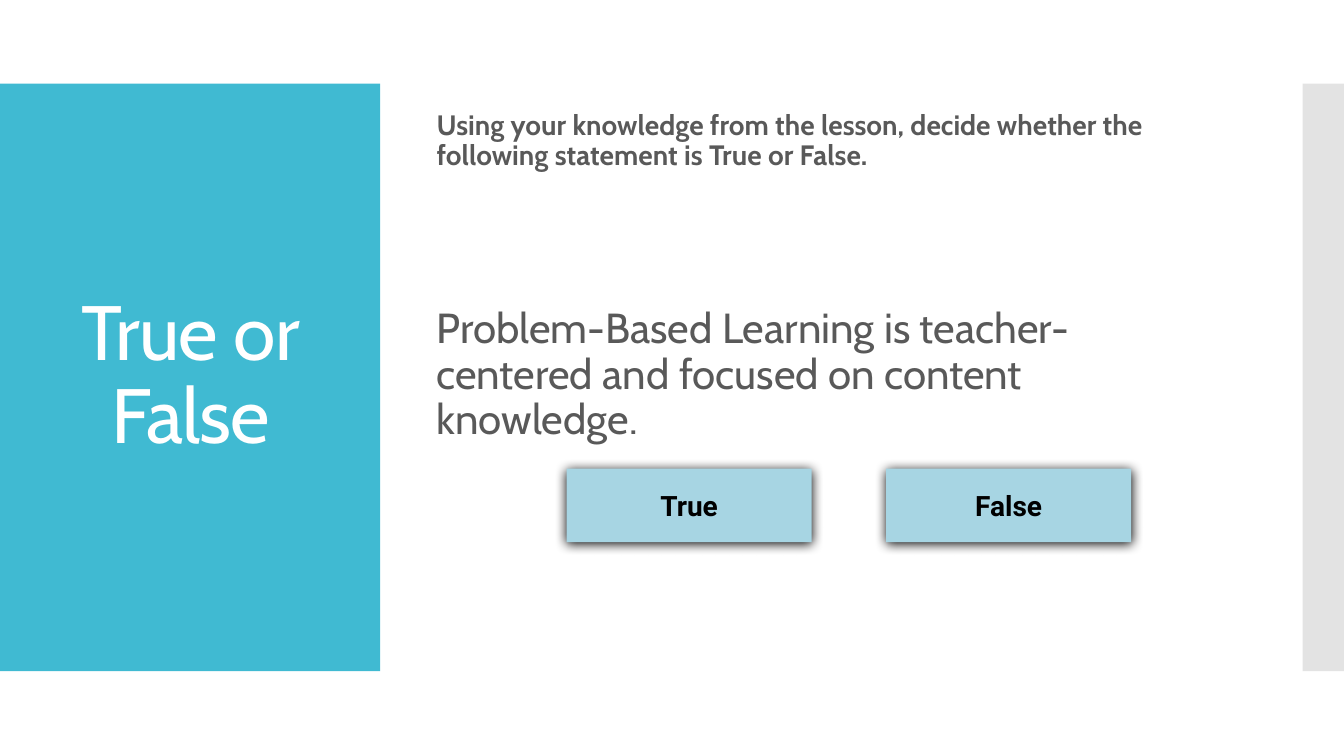
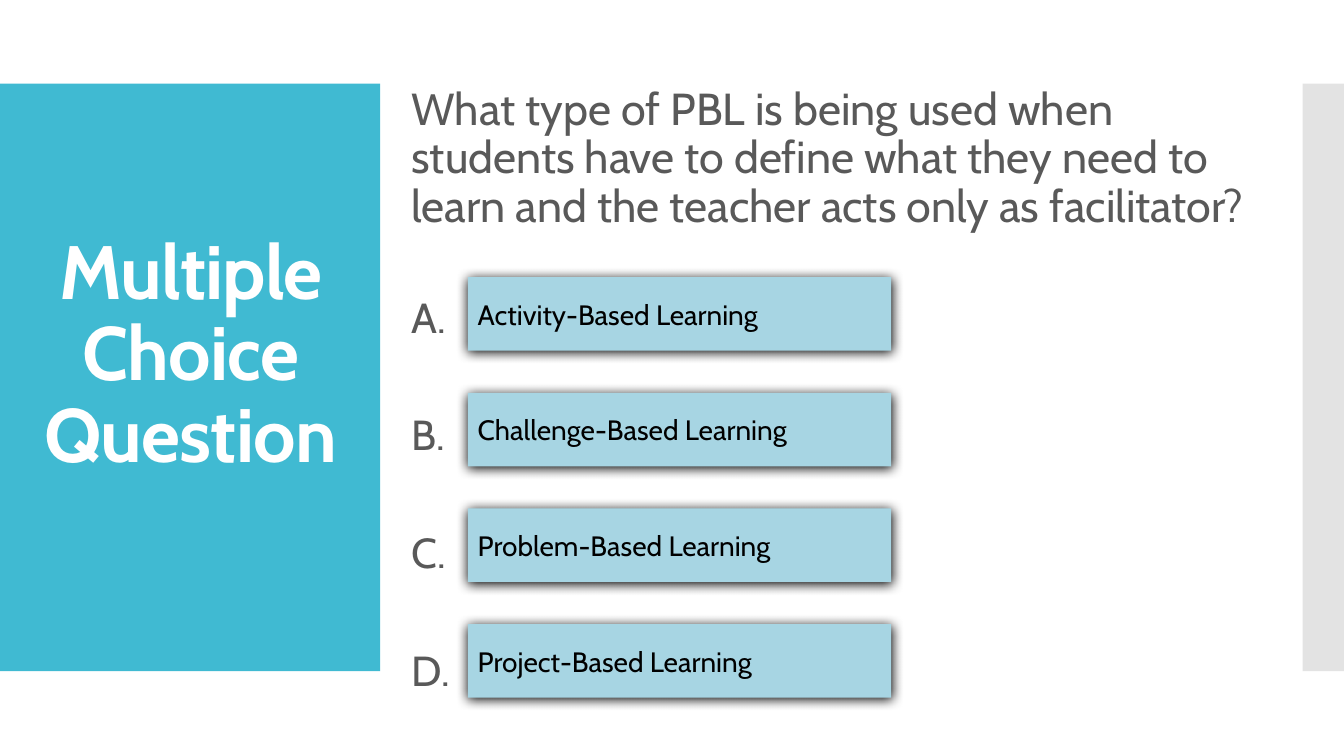
from lxml.etree import SubElement
from pptx import Presentation
from pptx.dml.color import RGBColor
from pptx.enum.shapes import MSO_SHAPE as Shape
from pptx.enum.text import MSO_ANCHOR as Anchor, PP_ALIGN as Align
from pptx.oxml.ns import qn
from pptx.util import Inches, Pt

COLOURS = {
    "band": "40BAD2",
    "edge": "C8C8C8",
    "button": "A7D5E3",
    "title": "FFFFFF",
    "body": "595959",
    "ink": "000000",
}
FONT = "Cabin"
BUTTON_FONT = "Roboto"
BAND_TOP, BAND_HEIGHT = 0.83, 5.83
BUTTON_HEIGHT = 0.73


def colour(name):
    return RGBColor.from_string(COLOURS[name])


def write(para, text, size=20, font=FONT, ink="body", bold=False,
          align=Align.LEFT, leading=0.9, before=0, tracking=0):
    para.alignment = align
    para.line_spacing = leading
    para.space_before = Pt(before)
    span = para.add_run()
    span.text = text
    span.font.name = font
    span.font.size = Pt(size)
    span.font.bold = bold
    span.font.color.rgb = colour(ink)
    if tracking:
        span.font._element.set("spc", str(int(tracking * 100)))


def add_text(page, box, lines, anchor=Anchor.TOP, before=0, **style):
    label = page.shapes.add_textbox(*map(Inches, box))
    frame = label.text_frame
    frame.word_wrap = True
    frame.vertical_anchor = anchor
    frame.margin_left = frame.margin_right = 0
    frame.margin_top = frame.margin_bottom = 0
    for index, line in enumerate(lines):
        para = frame.add_paragraph() if index else frame.paragraphs[0]
        write(para, line, before=before if index else 0, **style)


def add_panel(page, box, fill, alpha=None):
    panel = page.shapes.add_shape(Shape.RECTANGLE, *map(Inches, box))
    panel.fill.solid()
    panel.fill.fore_color.rgb = colour(fill)
    panel.line.fill.background()
    panel.shadow.inherit = False
    if alpha is not None:
        tint = panel._element.spPr.find(".//" + qn("a:srgbClr"))
        SubElement(tint, qn("a:alpha"), val=str(alpha * 1000))
    return panel


def add_button(page, box, text, **style):
    button = add_panel(page, box, "button")
    effects = button._element.spPr.find(qn("a:effectLst"))
    shadow = SubElement(effects, qn("a:outerShdw"), blurRad=str(Pt(8.5)),
                        dist=str(Pt(1)), dir="5400000", rotWithShape="0")
    SubElement(shadow, qn("a:srgbClr"), val=COLOURS["ink"])
    frame = button.text_frame
    frame.word_wrap = True
    frame.vertical_anchor = Anchor.MIDDLE
    write(frame.paragraphs[0], text, ink="ink", leading=1.0, **style)


def add_page(deck, title, title_top, **style):
    page = deck.slides.add_slide(deck.slide_layouts[6])
    add_panel(page, (0, BAND_TOP, 3.77, BAND_HEIGHT), "band")
    add_panel(page, (12.92, BAND_TOP, 0.41, BAND_HEIGHT), "edge", alpha=50)
    add_text(page, (0.38, title_top, 3.02, 5.03), [title], Anchor.MIDDLE,
             ink="title", align=Align.CENTER, tracking=-0.6, **style)
    return page


def add_true_false(page, box, prompt, statement):
    left, top, width = box
    add_text(page, (left, top, width, 0.7), [prompt], bold=True)
    add_text(page, (left, top + 1.95, width, 1.5), [statement], size=30)
    for index, answer in enumerate(("True", "False")):
        add_button(page, (left + 1.29 + index * 3.17, top + 3.55, 2.43, BUTTON_HEIGHT),
                   answer, font=BUTTON_FONT, bold=True, align=Align.CENTER)


def add_multiple_choice(page, box, question, choices):
    left, top, width = box
    add_text(page, (left, top, width, 1.5), [question], size=32)
    letters = [f"{letter}." for letter, _ in zip("ABCD", choices)]
    add_text(page, (left, top + 2.03, 0.5, 4.1), letters,
             size=30, leading=1.0, before=48)
    for index, choice in enumerate(choices):
        add_button(page, (left + 0.56, top + 1.89 + index * 1.147, 4.2, BUTTON_HEIGHT), choice)


def main():
    deck = Presentation()
    deck.slide_width, deck.slide_height = Inches(13.33), Inches(7.5)

    page = add_page(deck, "True or False", 1.23, size=55)
    add_true_false(
        page, (4.33, 1.1, 7.5),
        "Using your knowledge from the lesson, decide whether the following "
        "statement is True or False.",
        "Problem-Based Learning is teacher-centered and focused on content knowledge.")

    page = add_page(deck, "Multiple Choice Question", 1.02, size=54, bold=True)
    add_multiple_choice(
        page, (4.08, 0.86, 8.38),
        "What type of PBL is being used when students have to define what they "
        "need to learn and the teacher acts only as facilitator?",
        [f"{kind}-Based Learning"
         for kind in ("Activity", "Challenge", "Problem", "Project")])

    deck.save("out.pptx")


if __name__ == "__main__":
    main()
